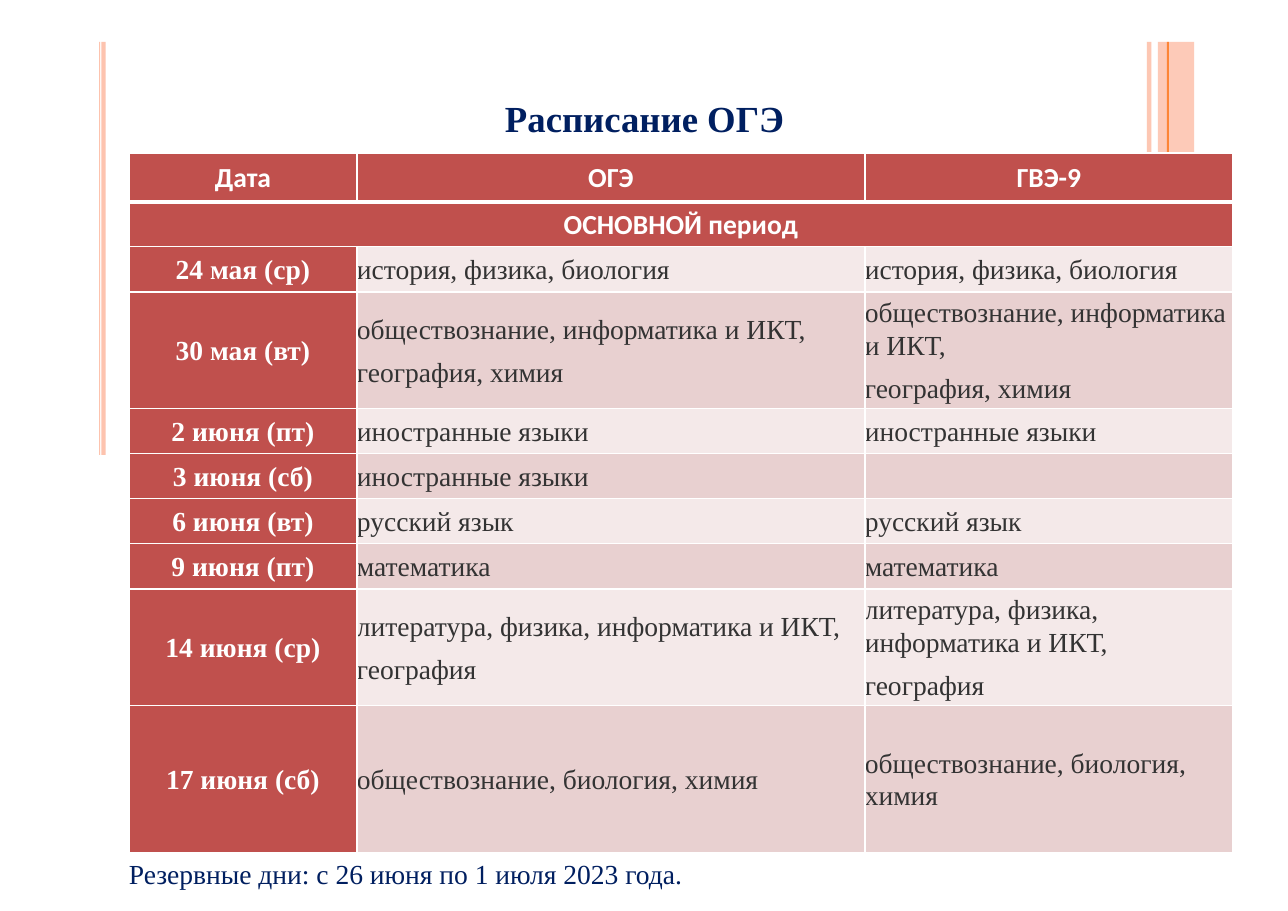
from dataclasses import dataclass
from typing import Any

import lxml.etree
import pptx
import pptx.dml.color
import pptx.enum.shapes
import pptx.enum.text
import pptx.oxml.ns
import pptx.util

Inches = pptx.util.Inches
Pt = pptx.util.Pt
CENTER = pptx.enum.text.PP_ALIGN.CENTER
LEFT = pptx.enum.text.PP_ALIGN.LEFT
MIDDLE = pptx.enum.text.MSO_ANCHOR.MIDDLE


@dataclass(frozen=True)
class Theme:
    """Colours, fonts and type sizes of the slide."""
    navy: str = "001F60"
    white: str = "FFFFFF"
    ink: str = "333333"
    red: str = "C0504D"
    bands: tuple[str, str] = ("F4E9E9", "E8D0D0")
    peach: str = "FDC3AE"
    orange: str = "FD8536"
    serif: str = "Times New Roman"
    sans: str = "Calibri"
    title_size: int = 24
    text_size: int = 18


@dataclass(frozen=True)
class Stripe:
    """A vertical decorative stripe."""
    left: float
    width: float
    color: str
    alpha: int = 100


@dataclass(frozen=True)
class Style:
    """Look of a piece of text."""
    font: str
    size: int
    color: str
    bold: bool = False
    align: Any = LEFT


@dataclass(frozen=True)
class Exam:
    """One exam day with its subjects for both exam forms."""
    date: str
    oge: str
    gve: str
    height: float = 0.41


T = Theme()
TITLE = Style(T.serif, T.title_size, T.navy, True, CENTER)
NOTE = Style(T.serif, T.text_size, T.navy)
HEADER = Style(T.sans, T.text_size, T.white, True, CENTER)
DATE = Style(T.serif, T.text_size, T.white, True, CENTER)
SUBJECT = Style(T.serif, T.text_size, T.ink)

STRIPES = [
    Stripe(10.41, 0.04, T.peach, 93),
    Stripe(0.9, 0.01, T.peach),
    Stripe(0.92, 0.04, T.peach),
    Stripe(10.51, 0.33, T.peach, 87),
    Stripe(10.59, 0.02, T.orange),
]
COLUMNS = [("Дата", 2.07), ("ОГЭ", 4.61), ("ГВЭ-9", 3.34)]
HEADER_HEIGHT, PERIOD_HEIGHT = 0.44, 0.41
SOCIAL = "обществознание, информатика и ИКТ,\nгеография, химия"
LITERATURE = "литература, физика, информатика и ИКТ,\nгеография"
EXAMS = [
    Exam("24 мая (ср)", "история, физика, биология", "история, физика, биология"),
    Exam("30 мая (вт)", SOCIAL, SOCIAL, 0.98),
    Exam("2 июня (пт)", "иностранные языки", "иностранные языки"),
    Exam("3 июня (сб)", "иностранные языки", ""),
    Exam("6 июня (вт)", "русский язык", "русский язык"),
    Exam("9 июня (пт)", "математика", "математика"),
    Exam("14 июня (ср)", LITERATURE, LITERATURE, 0.97),
    Exam("17 июня (сб)", "обществознание, биология, химия",
         "обществознание, биология, химия", 1.34),
]


def rgb(color: str) -> pptx.dml.color.RGBColor:
    """Turn a hex string into a colour."""
    return pptx.dml.color.RGBColor.from_string(color)


def sub(parent: Any, tag: str, **attrs: str) -> Any:
    """Append a DrawingML element to a parent."""
    return lxml.etree.SubElement(parent, pptx.oxml.ns.qn(tag), attrs)


def write(tf: Any, text: str, style: Style) -> None:
    """Fill a text frame and format its paragraphs and runs."""
    tf.text = text
    for p in tf.paragraphs:
        p.alignment = style.align
        p.font.size = Pt(style.size)
        for r in p.runs:
            r.font.name = style.font
            r.font.size = Pt(style.size)
            r.font.bold = style.bold
            r.font.color.rgb = rgb(style.color)


def add_stripe(s: Any, stripe: Stripe) -> None:
    """Draw one stripe down the slide edge."""
    sp = s.shapes.add_shape(pptx.enum.shapes.MSO_SHAPE.RECTANGLE, Inches(stripe.left),
                            Inches(0.38), Inches(stripe.width), Inches(3.75))
    sp.shadow.inherit = False
    sp.line.fill.background()
    sp.fill.solid()
    sp.fill.fore_color.rgb = rgb(stripe.color)
    if stripe.alpha < 100:
        clr = sp.fill._xPr.find(".//" + pptx.oxml.ns.qn("a:srgbClr"))
        sub(clr, "a:alpha", val=str(stripe.alpha * 1000))


def add_text(s: Any, left: float, top: float, width: float, height: float,
             text: str, style: Style) -> None:
    """Add a text box without insets."""
    sp = s.shapes.add_textbox(Inches(left), Inches(top), Inches(width), Inches(height))
    tf = sp.text_frame
    tf.word_wrap = True
    tf.margin_left = tf.margin_top = tf.margin_right = tf.margin_bottom = 0
    write(tf, text, style)


def fill_cell(cell: Any, text: str, style: Style, color: str,
              top: int = 1, bottom: int = 1) -> None:
    """Set borders, fill and text of a table cell."""
    tc_pr = cell._tc.get_or_add_tcPr()
    for tag, width in (("a:lnL", 1), ("a:lnR", 1), ("a:lnT", top), ("a:lnB", bottom)):
        ln = sub(tc_pr, tag, w=str(Pt(width)))
        sub(sub(ln, "a:solidFill"), "a:srgbClr", val=T.white)
    cell.fill.solid()
    cell.fill.fore_color.rgb = rgb(color)
    cell.vertical_anchor = MIDDLE
    cell.margin_left = cell.margin_top = cell.margin_right = cell.margin_bottom = 0
    write(cell.text_frame, text, style)
    for p in cell.text_frame.paragraphs:
        p.line_spacing = 1.07
        p.space_after = Pt(6.8)


def add_schedule(s: Any) -> None:
    """Build the exam timetable."""
    heights = [HEADER_HEIGHT, PERIOD_HEIGHT] + [exam.height for exam in EXAMS]
    width = sum(w for _, w in COLUMNS)
    table = s.shapes.add_table(len(heights), len(COLUMNS), Inches(1.17), Inches(1.39),
                               Inches(width), Inches(sum(heights))).table
    for row, height in zip(table.rows, heights):
        row.height = Inches(height)
    for i, (name, col_width) in enumerate(COLUMNS):
        table.columns[i].width = Inches(col_width)
        fill_cell(table.cell(0, i), name, HEADER, T.red, bottom=3)
        fill_cell(table.cell(1, i), "" if i else "ОСНОВНОЙ период", HEADER, T.red, top=3)
    table.cell(1, 0).merge(table.cell(1, len(COLUMNS) - 1))
    for i, exam in enumerate(EXAMS):
        band = T.bands[i % 2]
        fill_cell(table.cell(i + 2, 0), exam.date, DATE, T.red)
        fill_cell(table.cell(i + 2, 1), exam.oge, SUBJECT, band)
        fill_cell(table.cell(i + 2, 2), exam.gve, SUBJECT, band)


def main() -> None:
    """Build the slide and save it."""
    prs = pptx.Presentation()
    prs.slide_width, prs.slide_height = Inches(11.69), Inches(8.27)
    s = prs.slides.add_slide(prs.slide_layouts[6])
    for stripe in STRIPES:
        add_stripe(s, stripe)
    add_text(s, 2.59, 0.87, 6.52, 0.4, "Расписание ОГЭ", TITLE)
    add_text(s, 1.17, 7.78, 9.43, 0.3, "Резервные дни: с 26 июня по 1 июля 2023 года.", NOTE)
    add_schedule(s)
    prs.save("out.pptx")


if __name__ == "__main__":
    main()
